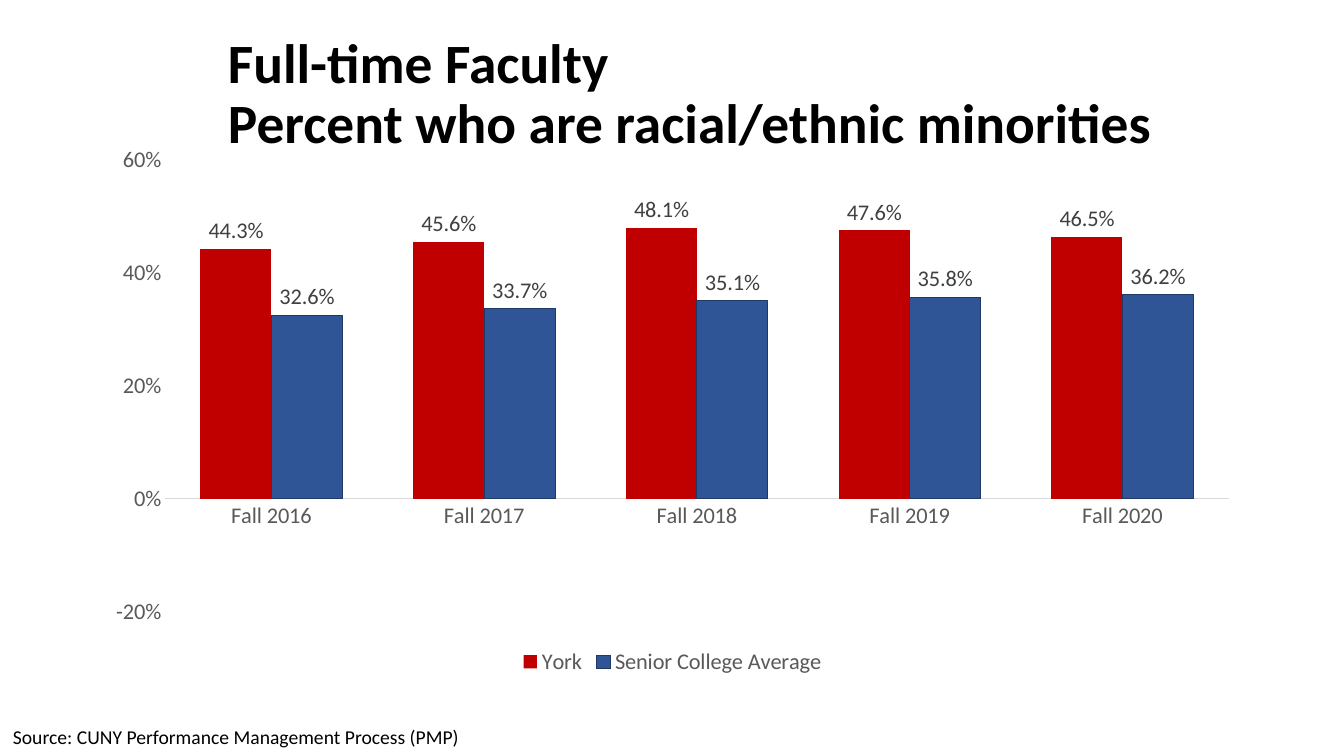
from pptx import Presentation
from pptx import util as u
from pptx.chart.data import CategoryChartData
from pptx.dml.color import RGBColor
from pptx.enum import chart as ch, text

TITLE = "Full-time Faculty\vPercent who are racial/ethnic minorities"
SOURCE = "Source: CUNY Performance Management Process (PMP)"
TERMS = [f"Fall {year}" for year in range(2016, 2021)]
SHARES = [
    ("York", (0.443, 0.456, 0.481, 0.476, 0.465), "york", None),
    ("Senior College Average", (0.326, 0.337, 0.351, 0.358, 0.362), "senior", "outline"),
]
COLORS = {
    "black": "000000", "axis": "595959", "label": "404040", "rule": "D9D9D9",
    "york": "C00000", "senior": "2F5597", "outline": "203864",
}
FONT = "Calibri"
SLIDE = (1344, 756)
TITLE_BOX = (218, 55, 1034, 81)
CHART_BOX = (93, 136, 1159, 544)
SOURCE_BOX = (3, 720, 471, 34)
EMU_PER_PX = 914400 / 100.8


def px(*lengths):
    return [u.Emu(round(length * EMU_PER_PX)) for length in lengths]


def color(name):
    return RGBColor.from_string(COLORS[name])


def style(font, size, name, bold=False):
    font.name = FONT
    font.size = u.Pt(size)
    font.bold = bold
    font.color.rgb = color(name)


def add_text(slide, box, words, size, bold, wrap, anchor, spacing):
    frame = slide.shapes.add_textbox(*px(*box)).text_frame
    frame.text = words
    frame.word_wrap = wrap
    frame.vertical_anchor = anchor
    line = frame.paragraphs[0]
    line.line_spacing = spacing
    for run in line.runs:
        style(run.font, size, "black", bold)


def add_faculty_chart(slide):
    data = CategoryChartData(number_format="0.0%")
    data.categories = TERMS
    for name, values, _, _ in SHARES:
        data.add_series(name, values)
    chart = slide.shapes.add_chart(
        ch.XL_CHART_TYPE.COLUMN_CLUSTERED, *px(*CHART_BOX), data).chart
    style(chart.font, 10, "black")
    chart.has_title = False
    chart.has_legend = True
    chart.legend.position = ch.XL_LEGEND_POSITION.BOTTOM
    chart.legend.include_in_layout = False
    style(chart.legend.font, 16, "axis")

    terms, percent = chart.category_axis, chart.value_axis
    for axis in (terms, percent):
        axis.major_tick_mark = ch.XL_TICK_MARK.NONE
        axis.minor_tick_mark = ch.XL_TICK_MARK.NONE
        axis.has_major_gridlines = False
        style(axis.tick_labels.font, 16, "axis")
    terms.format.line.color.rgb = color("rule")
    terms.format.line.width = u.Pt(0.75)
    percent.format.line.fill.background()
    percent.minimum_scale, percent.maximum_scale = -0.2, 0.6
    percent.major_unit = 0.2
    percent.tick_labels.number_format = "0%"
    percent.tick_labels.number_format_is_linked = False

    plot = chart.plots[0]
    plot.gap_width, plot.overlap = 100, 0
    plot.vary_by_categories = False
    for series, (_, _, fill, outline) in zip(plot.series, SHARES):
        series.invert_if_negative = False
        series.format.fill.solid()
        series.format.fill.fore_color.rgb = color(fill)
        if outline:
            series.format.line.color.rgb = color(outline)
            series.format.line.width = u.Pt(0.75)
        else:
            series.format.line.fill.background()
        labels = series.data_labels
        labels.show_value = True
        labels.position = ch.XL_LABEL_POSITION.OUTSIDE_END
        labels.number_format = "0.0%"
        labels.number_format_is_linked = False
        style(labels.font, 16, "label")


def main():
    deck = Presentation()
    deck.slide_width, deck.slide_height = px(*SLIDE)
    slide = deck.slides.add_slide(deck.slide_layouts[6])
    add_text(slide, TITLE_BOX, TITLE, 39.6, True, True, text.MSO_ANCHOR.MIDDLE, 0.9)
    add_faculty_chart(slide)
    add_text(slide, SOURCE_BOX, SOURCE, 14, False, False, text.MSO_ANCHOR.TOP, 1.0)
    deck.save("out.pptx")


if __name__ == "__main__":
    main()
